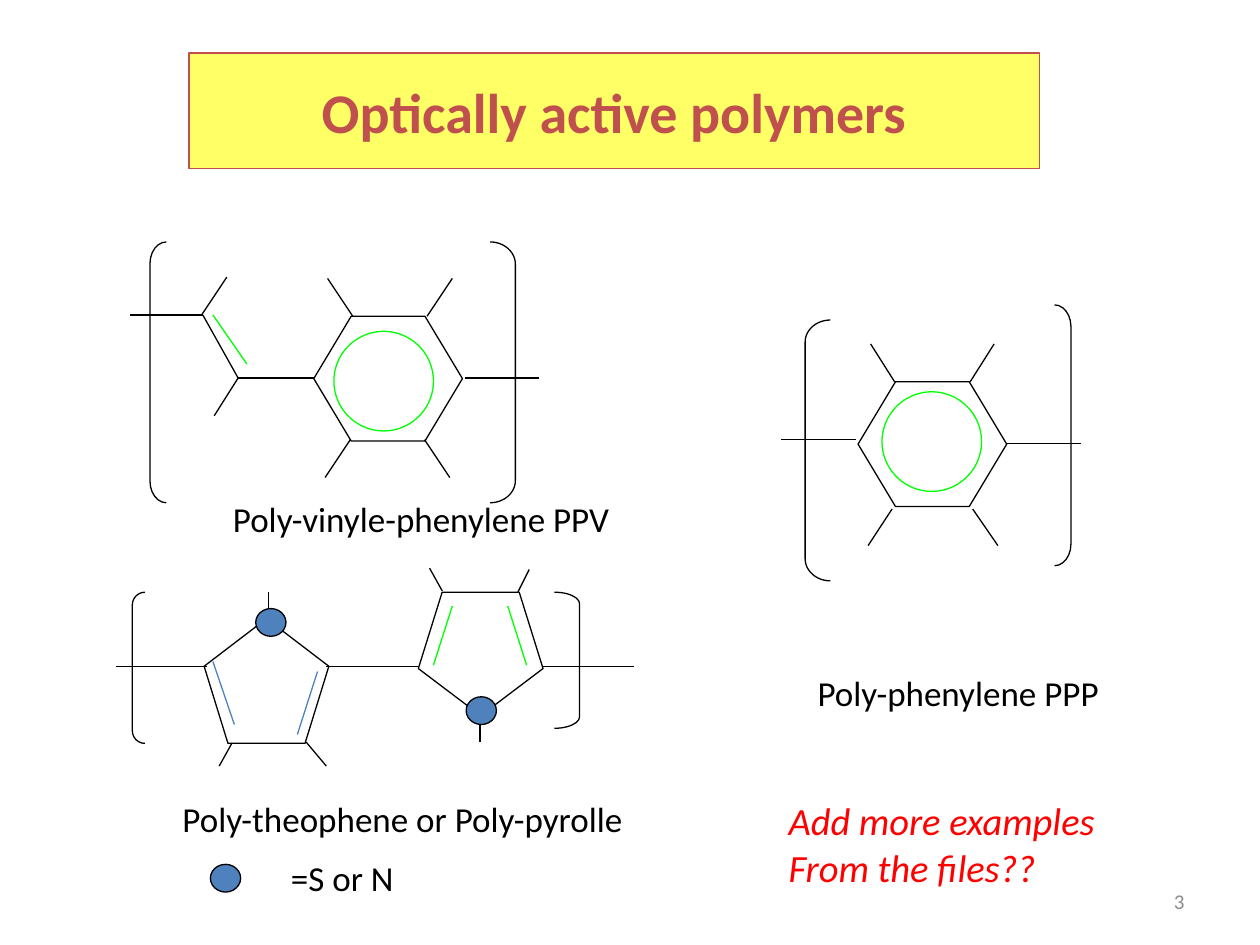
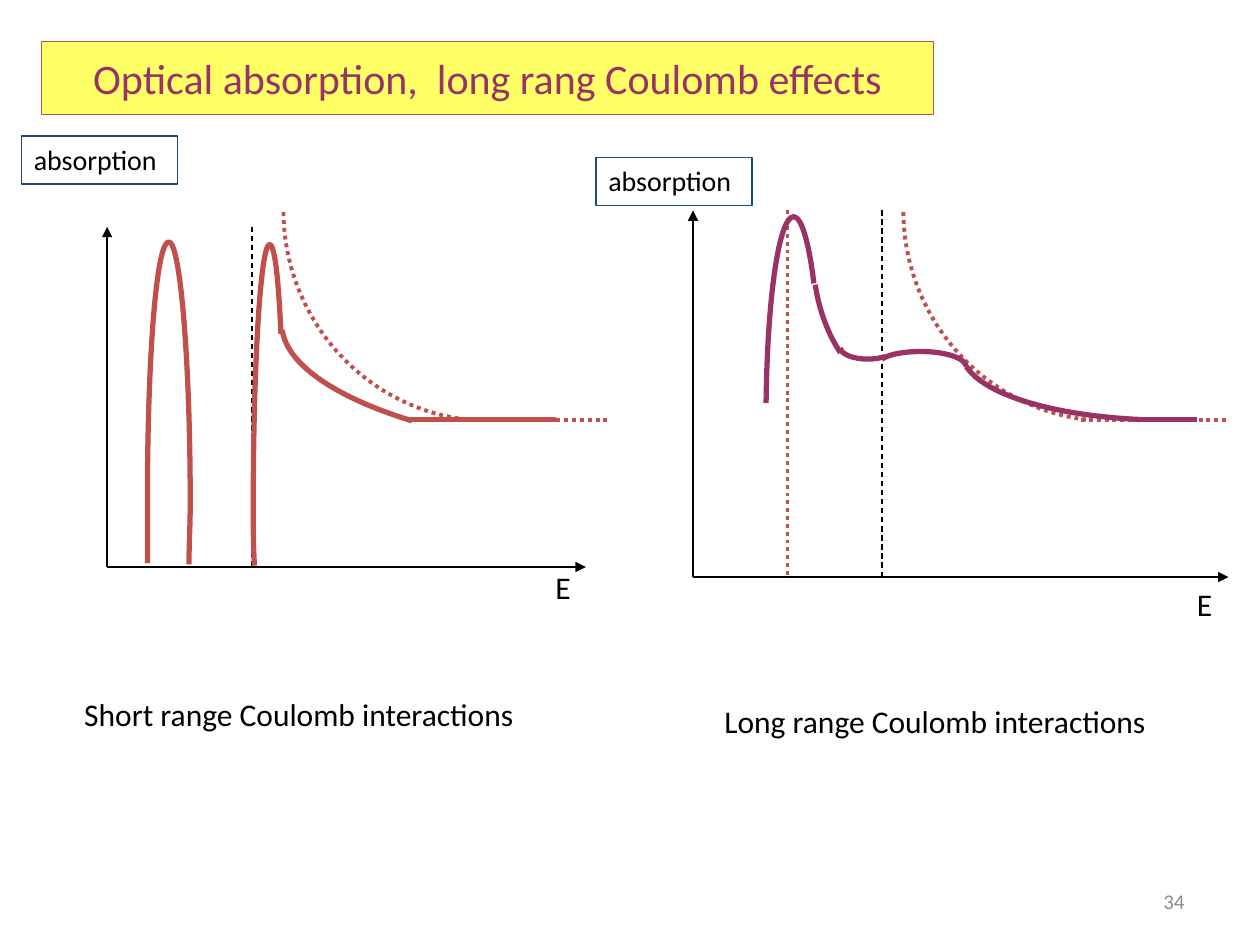
"""Build two slides on optically active polymers and their absorption."""
from lxml import etree
from pptx import Presentation
from pptx.dml.color import RGBColor
from pptx.enum import dml, shapes as kinds, text
from pptx.oxml import ns
from pptx.util import Inches, Pt

FONT = "Calibri"
BLACK, WHITE, GRAY = "000000", "FFFFFF", "8C8C8C"
YELLOW, RED, PLUM = "FFFF66", "C0504D", "993366"
GREEN, BLUE, NAVY, ALERT = "00FF00", "4F81BD", "1F497D", "FF0000"
KIND = kinds.MSO_SHAPE
DASH, DOT = dml.MSO_LINE.DASH, dml.MSO_LINE.ROUND_DOT


def rgb(code):
    """Turn a hex string into a colour."""
    return RGBColor.from_string(code)


def box(*sizes):
    """Turn numbers into inch lengths."""
    return [Inches(size) for size in sizes]


def stroke(item, color, width=0.75, dash=None):
    """Set the outline of a shape or connector."""
    item.line.color.rgb = rgb(color)
    item.line.width = Pt(width)
    if dash is not None:
        item.line.dash_style = dash


def paint(item, color):
    """Fill a shape, or clear its fill when no colour is given."""
    if color:
        item.fill.solid()
        item.fill.fore_color.rgb = rgb(color)
    else:
        item.fill.background()


def style(frame, size, color, align=None, bold=False, italic=False):
    """Format all paragraphs of a text frame alike."""
    for par in frame.paragraphs:
        par.alignment = align
        font = par.font
        font.name, font.size, font.color.rgb = FONT, Pt(size), rgb(color)
        font.bold, font.italic = bold, italic


def line(group, x1, y1, x2, y2, color=BLACK, width=0.75, dash=None, arrow=False):
    """Draw a straight line, with an arrowhead at its end if asked."""
    item = group.add_connector(kinds.MSO_CONNECTOR.STRAIGHT, *box(x1, y1, x2, y2))
    stroke(item, color, width, dash)
    props = item._element.spPr
    if arrow:
        etree.SubElement(item.line._get_or_add_ln(), ns.qn("a:tailEnd"), type="triangle")
    etree.SubElement(props, ns.qn("a:effectLst"))


def lines(group, rows, color=BLACK):
    """Draw several thin lines of one colour."""
    for row in rows:
        line(group, *row, color=color)


def form(group, kind, place, fill=None, color=BLACK, adj=None, turn=0):
    """Draw a preset shape."""
    item = group.add_shape(kind, *box(*place))
    item.shadow.inherit = False
    paint(item, fill)
    stroke(item, color)
    item.rotation = turn
    if adj is not None:
        item.adjustments[0] = adj


def curve(group, place, points, color, width=3, dash=None):
    """Draw a chain of cubic curves, given by ends and control points, in a frame."""
    x, y, wide, high = place
    pen = group.build_freeform(*box(x, y))
    pen.add_line_segments([box(x + wide, y + high)], close=False)
    item = pen.convert_to_shape()
    track = next(item._element.iter(ns.qn("a:path")))
    for child in list(track):
        track.remove(child)
    for spot, (px, py) in enumerate(points):
        if spot % 3 == 1 or spot == 0:
            step = etree.SubElement(track, ns.qn("a:cubicBezTo" if spot else "a:moveTo"))
        across, down = box(px - x, py - y)
        etree.SubElement(step, ns.qn("a:pt"), x=str(across), y=str(down))
    item.shadow.inherit = False
    paint(item, None)
    stroke(item, color, width, dash)


def label(slide, words, place, size, color=BLACK, italic=False, edge=None):
    """Add a text box that fits its words."""
    item = slide.shapes.add_textbox(*box(*place))
    frame = item.text_frame
    frame.text = words
    frame.word_wrap = False
    frame.auto_size = text.MSO_AUTO_SIZE.SHAPE_TO_FIT_TEXT
    style(frame, size, color, italic=italic)
    if edge:
        stroke(item, edge)


def page(deck, title, place, size, color, number, bold=False):
    """Add a slide with a yellow title band and a page number."""
    slide = deck.slides.add_slide(deck.slide_layouts[5])
    head = slide.shapes.title
    head.left, head.top, head.width, head.height = box(*place)
    head.text_frame.text = title
    head.text_frame.vertical_anchor = text.MSO_ANCHOR.MIDDLE
    style(head.text_frame, size, color, text.PP_ALIGN.CENTER, bold)
    paint(head, YELLOW)
    stroke(head, RED)
    foot = slide.shapes.add_textbox(*box(7.17, 6.95, 2.33, 0.4)).text_frame
    foot.text = number
    foot.word_wrap = True
    foot.vertical_anchor = text.MSO_ANCHOR.MIDDLE
    style(foot, 12, GRAY, text.PP_ALIGN.RIGHT)
    return slide


def ring(group, x, y, dx, dy):
    """Draw a benzene ring with its inner circle."""
    form(group, KIND.HEXAGON, (x, y, 1.18, 0.99), WHITE, adj=0.3)
    form(group, KIND.OVAL, (x + dx, y + dy, 0.79, 0.79), WHITE, GREEN)


def atom(group, x, y):
    """Draw the dot that stands for S or N."""
    form(group, KIND.FLOWCHART_CONNECTOR, (x, y, 0.24, 0.22), BLUE)


def phenylene(group):
    """Draw the PPP unit."""
    ring(group, 6.81, 3.03, 0.19, 0.08)
    lines(group, [(6.2, 3.49, 6.79, 3.49), (7.99, 3.52, 8.58, 3.52),
                  (7.7, 3.03, 7.89, 2.73), (6.91, 2.73, 7.1, 3.03),
                  (7.08, 4.04, 6.89, 4.33), (7.72, 4.04, 7.92, 4.33)])
    form(group, KIND.LEFT_BRACKET, (6.39, 2.54, 0.2, 2.07), adj=0.88)
    form(group, KIND.RIGHT_BRACKET, (8.37, 2.42, 0.13, 2.07), adj=1.33)


def vinylene(group):
    """Draw the PPV unit."""
    lines(group, [(1.96, 2.89, 1.69, 2.5)], GREEN)
    ring(group, 2.49, 2.51, 0.16, 0.12)
    lines(group, [(4.28, 3, 3.69, 3), (2.49, 3, 1.89, 3), (2.78, 3.49, 2.58, 3.79),
                  (3.57, 3.79, 3.37, 3.49), (3.39, 2.51, 3.59, 2.21), (2.8, 2.51, 2.6, 2.21),
                  (1.7, 3.3, 1.89, 3), (1.6, 2.5, 1.8, 2.2), (1.61, 2.5, 1.89, 3),
                  (1.61, 2.5, 1.03, 2.5)])
    form(group, KIND.LEFT_BRACKET, (3.89, 1.92, 0.2, 2.07), adj=0.88, turn=180)
    form(group, KIND.RIGHT_BRACKET, (1.19, 1.92, 0.13, 2.07), adj=1.33, turn=180)


def thiophene(group):
    """Draw the unit of two five-sided rings."""
    form(group, KIND.REGULAR_PENTAGON, (3.32, 4.7, 0.99, 0.98), WHITE, turn=180)
    form(group, KIND.REGULAR_PENTAGON, (1.62, 4.91, 0.99, 0.99), WHITE)
    lines(group, [(x1, 5.29, x2, 5.29) for x1, x2 in ((3.32, 2.59), (1.64, 0.92), (5.03, 4.3))])
    lines(group, [(3.51, 4.69, 3.41, 4.51), (4.2, 4.52, 4.11, 4.7), (3.81, 5.89, 3.81, 5.69),
                  (2.13, 4.7, 2.13, 4.9), (2.59, 6.08, 2.43, 5.89), (1.74, 6.08, 1.84, 5.9)])
    lines(group, [(3.59, 4.81, 3.44, 5.28), (4.18, 5.28, 4.03, 4.81)], GREEN)
    lines(group, [(2.36, 5.83, 2.52, 5.33), (1.86, 5.75, 1.69, 5.25)], BLUE)
    form(group, KIND.LEFT_BRACKET, (4.4, 4.7, 0.2, 1.08), adj=0.46, turn=180)
    form(group, KIND.RIGHT_BRACKET, (1.05, 4.7, 0.1, 1.2), adj=1.01, turn=180)
    atom(group, 3.7, 5.53)
    atom(group, 2.03, 4.83)


def plot(slide, x, top, base, end, gap, tag, note, mark):
    """Draw the axes, gap line and words of one absorption plot."""
    group = slide.shapes
    line(group, x, base, x, top, arrow=True)
    line(group, x, base, end, base, arrow=True)
    line(group, gap, top, gap, base, dash=DASH)
    label(slide, "absorption", (*tag, 1.24, 0.38), 16, edge=NAVY)
    label(slide, "E", (*mark, 0.42, 0.5), 18)
    label(slide, *note, 18)


def decay(group, x, start, end):
    """Draw the dotted free-carrier curve and its flat tail."""
    points = [(x + 1.45, 3.33), (x + 0.62, 3.23), (x, 2.51), (x, 1.67)]
    curve(group, (x, 1.67, 1.67, 1.67), points, RED, 2.25, DOT)
    line(group, start, 3.33, end, 3.33, RED, 2.25, DOT)


def polymers(deck):
    """Build the slide of polymer structures."""
    slide = page(deck, "Optically active polymers", (1.5, 0.42, 6.75, 0.92), 32, RED, "3", True)
    phenylene(slide.shapes.add_group_shape().shapes)
    pair = slide.shapes.add_group_shape().shapes
    vinylene(pair)
    thiophene(pair)
    atom(slide.shapes, 1.67, 6.86)
    for words, place in (("Poly-phenylene PPP", (6.39, 5.28, 2.5, 0.44)),
                         ("Poly-vinyle-phenylene PPV", (1.75, 3.9, 3.34, 0.44)),
                         ("Poly-theophene or Poly-pyrolle", (1.35, 6.28, 3.73, 0.44)),
                         ("=S or N", (2.21, 6.75, 1.02, 0.44))):
        label(slide, words, place, 20)
    label(slide, "Add more examples\nFrom the files??", (6.16, 6.28, 2.72, 0.84), 22, ALERT, True)


def spectra(deck):
    """Build the slide of absorption plots."""
    slide = page(deck, "Optical absorption,  long rang Coulomb effects",
                 (0.33, 0.33, 7.08, 0.58), 24, PLUM, "34")
    group = slide.shapes
    plot(slide, 0.85, 1.8, 4.5, 4.65, 2, (0.17, 1.08),
         ("Short range Coulomb interactions", (0.57, 5.47, 3.85, 0.4)), (4.31, 4.46))
    plot(slide, 5.5, 1.67, 4.58, 9.75, 7, (4.73, 1.25),
         ("Long range Coulomb interactions", (5.65, 5.52, 3.81, 0.4)), (9.4, 4.59))
    decay(group, 7.17, 8.58, 9.75)
    line(group, 6.25, 1.67, 6.25, 4.58, RED, 2.25, DOT)
    peak = group.add_group_shape().shapes
    curve(peak, (6.47, 1.97, 0.95, 0.83),
          [(6.67, 2.8), (6.57, 2.65), (6.5, 2.46), (6.47, 2.26)], PLUM)
    curve(peak, (6.08, 1.72, 0.38, 1.53),
          [(6.08, 3.2), (6.09, 2.38), (6.18, 1.72), (6.3, 1.72), (6.36, 1.72),
           (6.42, 1.92), (6.46, 2.25)], PLUM)
    for place, points in (
            ((7, 2.79, 0.67, 0.13),
             [(7.67, 2.91), (7.66, 2.84), (7.5, 2.79), (7.31, 2.79), (7.18, 2.79),
              (7.06, 2.81), (7, 2.85)]),
            ((6.67, 2.76, 0.36, 0.09),
             [(7.03, 2.83), (6.99, 2.84), (6.94, 2.85), (6.89, 2.85), (6.77, 2.85),
              (6.67, 2.81), (6.67, 2.76)]),
            ((7.67, 2.79, 1.6, 0.55),
             [(9.06, 3.33), (8.38, 3.3), (7.82, 3.14), (7.67, 2.91)])):
        curve(group, place, points, PLUM)
    line(group, 3.25, 3.33, 4.41, 3.33, RED, 3)
    line(group, 9, 3.33, 9.5, 3.33, PLUM, 3)
    for place, points in (
            ((2.24, 2.57, 3.46, 0.77),
             [(3.27, 3.34), (2.65, 3.15), (2.28, 2.89), (2.24, 2.62)]),
            ((2.01, 1.94, 0.22, 2.56),
             [(2.02, 4.49), (2.01, 4.34), (2.01, 4.18), (2.01, 4.02), (2.01, 2.87),
              (2.07, 1.94), (2.14, 1.94), (2.18, 1.94), (2.21, 2.2), (2.23, 2.65)]),
            ((1.17, 1.92, 0.34, 2.57),
             [(1.17, 4.47), (1.17, 4.32), (1.17, 4.16), (1.17, 4), (1.17, 2.85), (1.24, 1.92),
              (1.34, 1.92), (1.43, 1.92), (1.51, 2.85), (1.51, 4), (1.51, 4.16), (1.5, 4.33),
              (1.5, 4.48)])):
        curve(group, place, points, RED)
    decay(group, 2.25, 3.67, 4.83)


def main():
    """Build and save the deck."""
    deck = Presentation()
    deck.slide_width, deck.slide_height = box(10, 7.5)
    polymers(deck)
    spectra(deck)
    deck.save("out.pptx")


if __name__ == "__main__":
    main()
